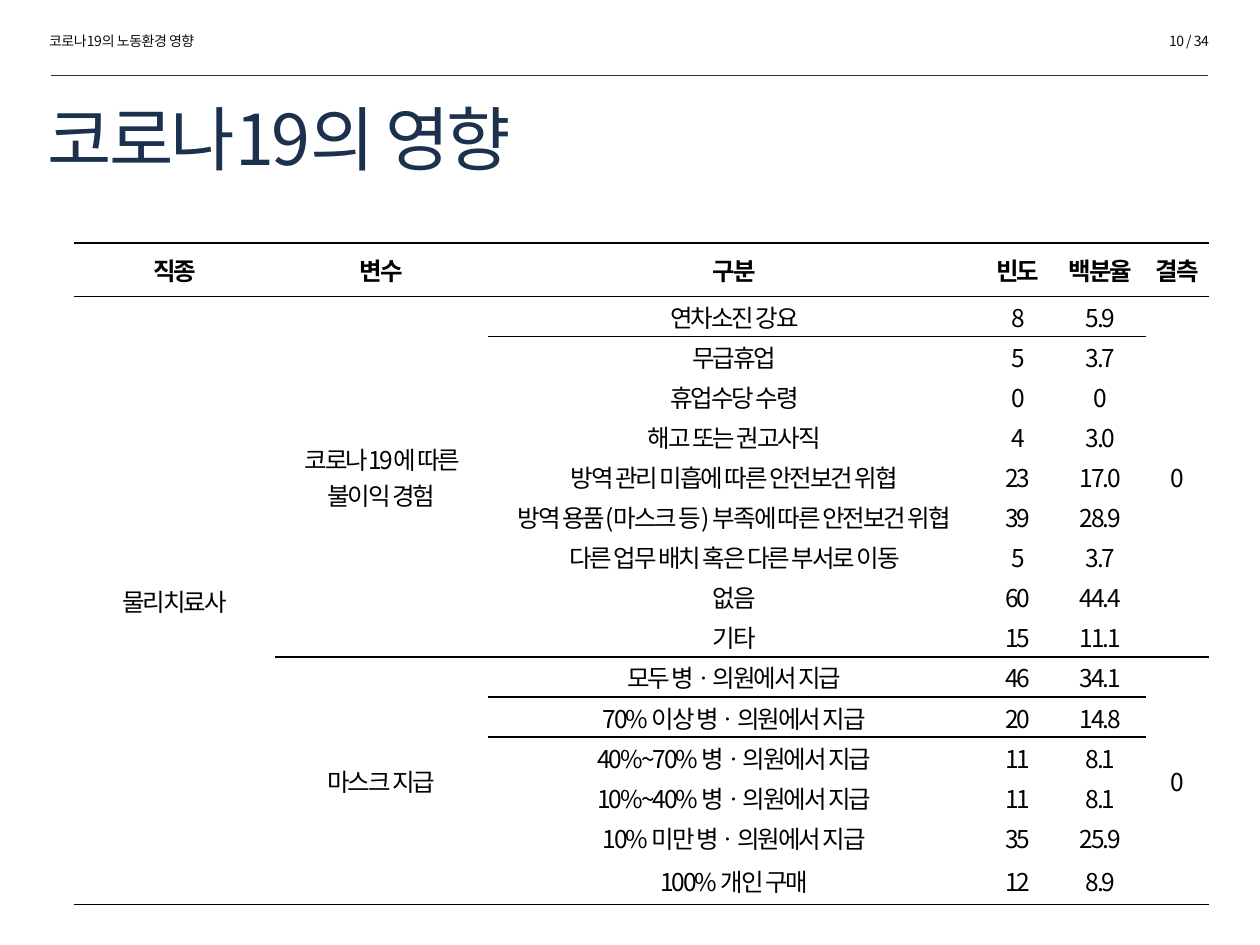
from lxml.etree import SubElement as Sub
from pptx import Presentation as Deck
from pptx.dml.color import RGBColor as Rgb
from pptx.enum.shapes import MSO_CONNECTOR as Link
from pptx.enum.text import MSO_ANCHOR as Anchor, MSO_AUTO_SIZE as Auto, PP_ALIGN as Align
from pptx.oxml.ns import qn
from pptx.util import Cm, Pt

HUES = {"navy": "1C314E", "grey": "0D0D0D", "black": "000000"}
FONT = "Noto Sans CJK KR"
PLAIN = "{2D5ABB26-0587-4C30-8999-92F81FD0307C}"  # table style without grid


class Page:
    def __init__(self, deck):
        self.shapes = deck.slides.add_slide(deck.slide_layouts[6]).shapes

    def add_run(self, frame, text, size, hue, gap, align=Align.LEFT, bold=False):
        para = frame.paragraphs[0]
        para.alignment = align
        run = para.add_run()
        run.text = text
        font = run.font
        font.size, font.bold, font.name = Pt(size), bold, FONT
        font.color.rgb = Rgb.from_string(HUES[hue])
        props = run._r.get_or_add_rPr()
        props.set("spc", str(round(gap * 100)))
        Sub(props, qn("a:ea"), typeface=FONT)

    def text(self, box, text, size, hue, gap, align=Align.LEFT,
             anchor=Anchor.TOP, fit=Auto.NONE):
        frame = self.shapes.add_textbox(*map(Cm, box)).text_frame
        frame.word_wrap = True
        frame.auto_size, frame.vertical_anchor = fit, anchor
        self.add_run(frame, text, size, hue, gap, align)

    def line(self, ends, hue, width):
        line = self.shapes.add_connector(Link.STRAIGHT, *map(Cm, ends))
        line.line.color.rgb = Rgb.from_string(HUES[hue])
        line.line.width = Pt(width)
        Sub(line._element.spPr, qn("a:effectLst"))

    def edge(self, cell, side):
        edge = Sub(cell._tc.get_or_add_tcPr(), qn("a:" + side), w=str(Pt(1)))
        Sub(Sub(edge, qn("a:solidFill")), qn("a:srgbClr"), val=HUES["black"])

    def table(self, left, top, cols, rows, data, spans, rules):
        grid = self.shapes.add_table(len(rows), len(cols), Cm(left), Cm(top),
                                     Cm(sum(cols)), Cm(sum(rows))).table
        grid.first_row = grid.horz_banding = False
        grid._tbl.tblPr.find(qn("a:tableStyleId")).text = PLAIN
        for col, width in zip(grid.columns, cols):
            col.width = Cm(width)
        for row, height in zip(grid.rows, rows):
            row.height = Cm(height)
        for (r, c), count in spans.items():
            grid.cell(r, c).merge(grid.cell(r + count - 1, c))
        for r, row in enumerate(data):
            for c, text in enumerate(row):
                cell = grid.cell(r, c)
                cell.margin_left = cell.margin_right = Cm(0.18 if c in (3, 4) and r else 0.16)
                cell.margin_top = cell.margin_bottom = Cm(0.05)
                cell.vertical_anchor = Anchor.MIDDLE
                if c in rules.get(r, ()):
                    self.edge(cell, "lnT")
                if c in rules.get(r + spans.get((r, c), 1), ()):
                    self.edge(cell, "lnB")
                cell.fill.background()
                if text:
                    self.add_run(cell.text_frame, text, 14, "black", -1.2,
                                 Align.CENTER, r == 0)


# Table content: label, count, percent
HEAD = ["직종", "변수", "구분", "빈도", "백분율", "결측"]
HARM = [
    ("연차소진 강요", "8", "5.9"),
    ("무급휴업", "5", "3.7"),
    ("휴업수당 수령", "0", "0"),
    ("해고 또는 권고사직", "4", "3.0"),
    ("방역 관리 미흡에 따른 안전보건 위협", "23", "17.0"),
    ("방역 용품(마스크 등) 부족에 따른 안전보건 위협", "39", "28.9"),
    ("다른 업무 배치 혹은 다른 부서로 이동", "5", "3.7"),
    ("없음", "60", "44.4"),
    ("기타", "15", "11.1"),
]
MASK = [
    ("모두 병ㆍ의원에서 지급", "46", "34.1"),
    ("70% 이상 병ㆍ의원에서 지급", "20", "14.8"),
    ("40%~70% 병ㆍ의원에서 지급", "11", "8.1"),
    ("10%~40% 병ㆍ의원에서 지급", "11", "8.1"),
    ("10% 미만 병ㆍ의원에서 지급", "35", "25.9"),
    ("100% 개인 구매", "12", "8.9"),
]


def block(job, name, items):
    """Put the shared cells in the first row of a group only."""
    return [[job if i == 0 else "", name if i == 0 else "", *item,
             "0" if i == 0 else ""] for i, item in enumerate(items)]


def main():
    deck = Deck()
    deck.slide_width, deck.slide_height = Cm(25.4), Cm(19.05)
    page = Page(deck)

    # Header and title
    page.text((0.74, 0.53, 4.4, 0.6), "코로나19의 노동환경 영향", 8, "grey", -0.3,
              fit=Auto.SHAPE_TO_FIT_TEXT)
    page.line((1.02, 1.52, 24.36, 1.52), "navy", 0.25)
    page.text((0.71, 1.96, 19.43, 1.62), "코로나19의 영향", 40, "navy", -1.5,
              anchor=Anchor.MIDDLE)
    page.text((20.22, 0.53, 4.4, 0.6), "10 / 34", 8, "grey", -0.3, Align.RIGHT,
              fit=Auto.SHAPE_TO_FIT_TEXT)

    # Survey table
    data = [HEAD] + block("물리치료사", "코로나19에 따른 불이익 경험", HARM) + block("", "마스크 지급", MASK)
    cut, end = 1 + len(HARM), len(data)
    spans = {(1, 0): end - 1}
    for c in (1, 5):
        spans[1, c], spans[cut, c] = len(HARM), len(MASK)
    full = range(len(HEAD))
    rules = {0: full, 1: full, cut: range(1, 6), cut + 1: range(2, 5), end: full}
    cols = [4.04, 4.3, 9.93, 1.5, 1.83, 1.27]
    first, last, total = 1.08, 0.96, 13.34
    step = (total - first - last) / (end - 2)
    page.table(1.5, 4.9, cols, [first] + [step] * (end - 2) + [last], data, spans, rules)

    deck.save("out.pptx")


if __name__ == "__main__":
    main()
